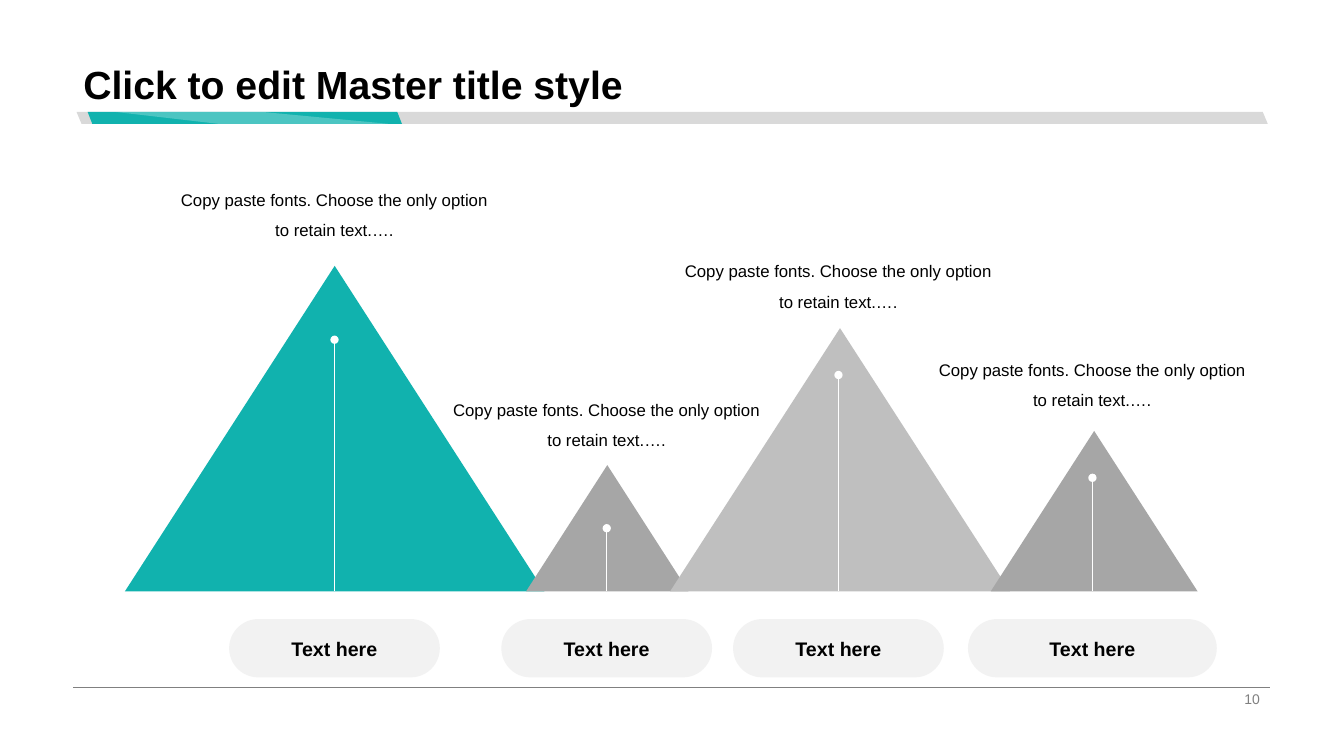
import dataclasses

import pptx
import pptx.dml.color
import pptx.enum.shapes
import pptx.enum.text
import pptx.oxml
import pptx.oxml.ns
import pptx.util

Cm = pptx.util.Cm
SHAPES = pptx.enum.shapes.MSO_SHAPE
ALIGN = pptx.enum.text.PP_ALIGN
ANCHOR = pptx.enum.text.MSO_ANCHOR
NAMESPACE = pptx.oxml.ns.nsdecls("a")


@dataclasses.dataclass(frozen=True)
class Theme:
    font: str = "Arial"
    ink: str = "000000"
    white: str = "FFFFFF"
    teal: str = "11B2AE"
    track: str = "D9D9D9"
    dark_peak: str = "A6A6A6"
    light_peak: str = "BFBFBF"
    pill: str = "F2F2F2"
    footer: str = "808080"
    title_size: int = 28
    label_size: int = 14
    caption_size: int = 12
    footer_size: int = 10
    line_width: float = 0.5


@dataclasses.dataclass(frozen=True)
class Peak:
    left: float
    width: float
    height: float
    color: str
    center: float
    marker_top: float
    caption_top: float
    pill_width: float


class PageBuilder:
    def __init__(self, page, theme):
        self.page = page
        self.theme = theme

    def paint(self, shape, color):
        shape.shadow.inherit = False
        shape.fill.solid()
        shape.fill.fore_color.rgb = pptx.dml.color.RGBColor.from_string(color)
        shape.line.fill.background()

    def shape(self, kind, left, top, width, height, color, adjustment=None):
        shape = self.page.shapes.add_shape(kind, Cm(left), Cm(top), Cm(width), Cm(height))
        self.paint(shape, color)
        if adjustment is not None:
            shape.adjustments[0] = adjustment
        return shape

    def slanted_bar(self, left, top, width, height, color, slant):
        bar = self.shape(SHAPES.PARALLELOGRAM, left, top, width, height, color, slant)
        bar.element.spPr.xfrm.set("flipH", "1")

    def glint(self, points, color, opacity):
        corners = [(Cm(x), Cm(y)) for x, y in points]
        builder = self.page.shapes.build_freeform(*corners[0])
        builder.add_line_segments(corners[1:], close=True)
        shape = builder.convert_to_shape()
        self.paint(shape, color)
        tint = shape.element.spPr.find(".//" + pptx.oxml.ns.qn("a:srgbClr"))
        tint.append(pptx.oxml.parse_xml(f'<a:alpha {NAMESPACE} val="{opacity * 1000}"/>'))

    def line(self, start, end, color, dotted_start=False):
        line = self.page.shapes.add_connector(
            pptx.enum.shapes.MSO_CONNECTOR.STRAIGHT, *map(Cm, start + end))
        line.line.color.rgb = pptx.dml.color.RGBColor.from_string(color)
        line.line.width = pptx.util.Pt(self.theme.line_width)
        properties = line.element.spPr
        if dotted_start:
            properties.find(pptx.oxml.ns.qn("a:ln")).append(
                pptx.oxml.parse_xml(f'<a:headEnd {NAMESPACE} type="oval"/>'))
        properties.append(pptx.oxml.parse_xml(f"<a:effectLst {NAMESPACE}/>"))

    def set_text(self, box, text, size, color, align, anchor,
                 bold=False, spacing=1.0, wrap=True):
        frame = box.text_frame
        frame.text = text
        frame.word_wrap = wrap
        frame.vertical_anchor = anchor
        para = frame.paragraphs[0]
        para.alignment = align
        para.line_spacing = spacing
        for span in para.runs:
            span.font.name = self.theme.font
            span.font.size = pptx.util.Pt(size)
            span.font.bold = bold
            span.font.color.rgb = pptx.dml.color.RGBColor.from_string(color)

    def text(self, left, top, width, height, *content, **style):
        box = self.page.shapes.add_textbox(Cm(left), Cm(top), Cm(width), Cm(height))
        self.set_text(box, *content, **style)

    def pill(self, center, top, width, height, text):
        pill = self.shape(SHAPES.ROUNDED_RECTANGLE, center - width / 2, top,
                          width, height, self.theme.pill, 0.5)
        self.set_text(pill, text, self.theme.label_size, self.theme.ink,
                      ALIGN.CENTER, ANCHOR.MIDDLE, bold=True, wrap=False)


def draw_frame(builder):
    theme = builder.theme
    bar_top, bar_height = 2.82, 0.3
    bar_bottom = bar_top + bar_height
    builder.slanted_bar(1.93, bar_top, 30.02, bar_height, theme.track, 0.42)
    builder.slanted_bar(2.21, bar_top, 7.92, bar_height, theme.teal, 0.39)
    builder.glint([(9.78, bar_bottom), (6.6, bar_top), (2.9, bar_top), (5.49, bar_bottom)],
                  theme.white, 25)
    footer_top = 17.32
    builder.line((1.85, footer_top), (32, footer_top), theme.footer)
    builder.text(1.85, 0, 30.15, 2.84, "Click to edit Master title style",
                 theme.title_size, theme.ink, ALIGN.LEFT, ANCHOR.BOTTOM,
                 bold=True, spacing=0.9)
    builder.text(23.92, footer_top, 8.08, 0.58, "10", theme.footer_size,
                 theme.footer, ALIGN.RIGHT, ANCHOR.MIDDLE)


def draw_peaks(builder):
    theme = builder.theme
    base = 14.9
    caption_width = 8.69
    peaks = [
        Peak(3.15, 10.57, 8.2, theme.teal, 8.43, 8.56, 4.39, 5.31),
        Peak(13.26, 4.09, 3.18, theme.dark_peak, 15.29, 13.31, 9.7, 5.31),
        Peak(16.89, 8.56, 6.63, theme.light_peak, 21.13, 9.45, 6.2, 5.31),
        Peak(24.97, 5.21, 4.04, theme.dark_peak, 27.53, 12.04, 8.69, 6.27),
    ]
    for peak in peaks:
        builder.shape(SHAPES.ISOSCELES_TRIANGLE, peak.left, base - peak.height,
                      peak.width, peak.height, peak.color)
    for peak in peaks:
        builder.line((peak.center, peak.marker_top), (peak.center, base),
                     theme.white, dotted_start=True)
        builder.pill(peak.center, 15.6, peak.pill_width, 1.47, "Text here")
        builder.text(peak.center - caption_width / 2, peak.caption_top, caption_width, 1.73,
                     "Copy paste fonts. Choose the only option to retain text.….",
                     theme.caption_size, theme.ink, ALIGN.CENTER, ANCHOR.TOP, spacing=1.5)


def main():
    deck = pptx.Presentation()
    deck.slide_width, deck.slide_height = Cm(33.87), Cm(19.05)
    page = deck.slides.add_slide(deck.slide_layouts[6])
    builder = PageBuilder(page, Theme())
    draw_frame(builder)
    draw_peaks(builder)
    deck.save("out.pptx")


if __name__ == "__main__":
    main()
